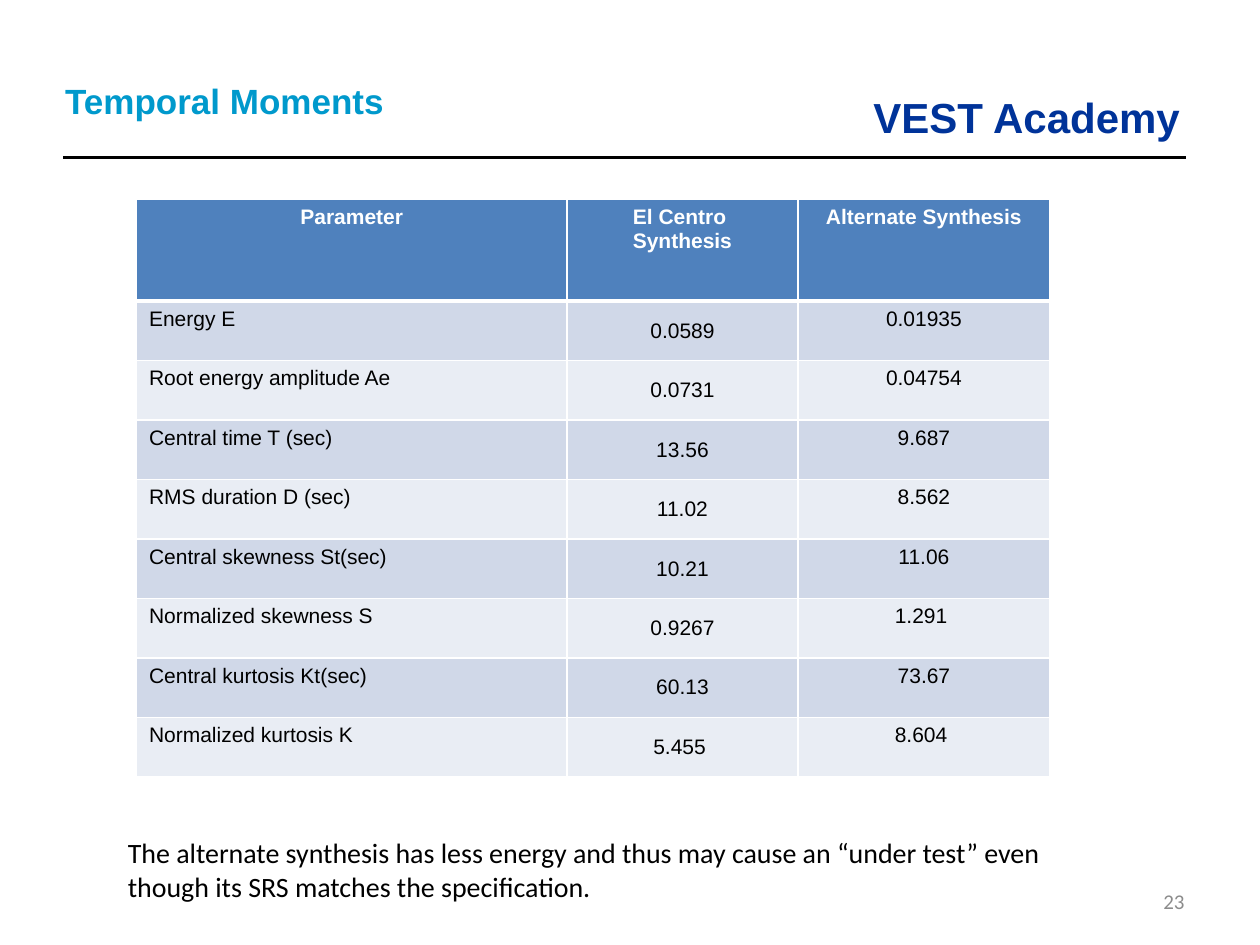
from pptx import Presentation
from pptx.dml.color import RGBColor
from pptx.enum.shapes import MSO_CONNECTOR
from pptx.enum.text import MSO_ANCHOR, MSO_AUTO_SIZE, PP_ALIGN
from pptx.oxml.ns import qn
from pptx.util import Pt
from lxml.etree import SubElement


def color(hex_string):
    return RGBColor.from_string(hex_string)


class SlideBuilder:
    heading_font = "Arial"
    body_font = "Calibri"
    black = "000000"
    white = "FFFFFF"
    header_fill = "4F81BD"
    band_fills = ("D0D8E8", "E9EDF4")

    def __init__(self, presentation):
        self.slide = presentation.slides.add_slide(presentation.slide_layouts[5])

    def add_runs(self, paragraph, text, size, font, hex_string, bold=False, align=PP_ALIGN.LEFT):
        paragraph.alignment = align
        for index, line in enumerate(text.split("\n")):
            if index:
                paragraph.add_line_break()
            run = paragraph.add_run()
            run.text = line
            run.font.size = Pt(size)
            run.font.name = font
            run.font.bold = bold
            run.font.color.rgb = color(hex_string)

    def frame(self, shape, wrap, anchor=MSO_ANCHOR.TOP):
        text_frame = shape.text_frame
        text_frame.word_wrap = wrap
        text_frame.auto_size = MSO_AUTO_SIZE.NONE
        text_frame.vertical_anchor = anchor
        return text_frame.paragraphs[0]

    def title(self, text, left, top, width, height):
        shape = self.slide.shapes.title
        shape.left, shape.top = Pt(left), Pt(top)
        shape.width, shape.height = Pt(width), Pt(height)
        self.add_runs(self.frame(shape, False), text, 20, self.heading_font, "0099CC", True)

    def text(self, text, left, top, width, height, size, font, hex_string,
             bold=False, align=PP_ALIGN.LEFT, wrap=True, anchor=MSO_ANCHOR.TOP):
        shape = self.slide.shapes.add_textbox(Pt(left), Pt(top), Pt(width), Pt(height))
        paragraph = self.frame(shape, wrap, anchor)
        self.add_runs(paragraph, text, size, font, hex_string, bold, align)

    def rule(self, left, right, top):
        line = self.slide.shapes.add_connector(
            MSO_CONNECTOR.STRAIGHT, Pt(left), Pt(top), Pt(right), Pt(top))
        line.line.color.rgb = color(self.black)
        line.line.width = Pt(2.25)
        SubElement(line._element.spPr, qn("a:effectLst"))

    def borders(self, cell, top, bottom):
        properties = cell._tc.get_or_add_tcPr()
        for side, width in (("L", 1), ("R", 1), ("T", top), ("B", bottom)):
            border = SubElement(properties, qn(f"a:ln{side}"), w=str(Pt(width)))
            fill = SubElement(border, qn("a:solidFill"))
            SubElement(fill, qn("a:srgbClr"), val=self.white)

    def table(self, rows, left, top, widths, header_height, row_height):
        heights = [header_height] + [row_height] * (len(rows) - 1)
        table = self.slide.shapes.add_table(
            len(rows), len(widths), Pt(left), Pt(top), Pt(sum(widths)), Pt(sum(heights))).table
        for column, width in zip(table.columns, widths):
            column.width = Pt(width)
        for row_index, values in enumerate(rows):
            table.rows[row_index].height = Pt(heights[row_index])
            header = row_index == 0
            for column_index, value in enumerate(values):
                cell = table.cell(row_index, column_index)
                self.borders(cell, 3 if row_index == 1 else 1, 3 if header else 1)
                cell.fill.solid()
                cell.fill.fore_color.rgb = color(
                    self.header_fill if header else self.band_fills[(row_index - 1) % 2])
                middle = column_index == 1 and not header
                cell.vertical_anchor = MSO_ANCHOR.MIDDLE if middle else MSO_ANCHOR.TOP
                align = PP_ALIGN.CENTER if header or column_index else PP_ALIGN.LEFT
                self.add_runs(cell.text_frame.paragraphs[0], value, 12, self.heading_font,
                              self.white if header else self.black, header, align)


def main():
    presentation = Presentation()
    presentation.slide_width, presentation.slide_height = Pt(720), Pt(540)
    builder = SlideBuilder(presentation)
    builder.text("VEST Academy", 492, 49, 196, 36, 24, builder.heading_font,
                 "003399", bold=True, wrap=False)
    builder.rule(36, 678, 90)
    builder.text("23", 516, 500.5, 168, 28.75, 12, builder.body_font, "8C8C8C",
                 align=PP_ALIGN.RIGHT, anchor=MSO_ANCHOR.MIDDLE)
    builder.title("Temporal Moments", 30, 42, 198, 31.5)
    builder.table([
        ("Parameter", "El Centro \nSynthesis", "Alternate Synthesis"),
        ("Energy E", "0.0589", "0.01935"),
        ("Root energy amplitude Ae", "0.0731", "0.04754"),
        ("Central time T (sec)", "13.56", "9.687"),
        ("RMS duration D (sec)", "11.02", "8.562"),
        ("Central skewness St(sec)", "10.21", "11.06"),
        ("Normalized skewness S", "0.9267", "1.291 "),
        ("Central kurtosis Kt(sec)", "60.13", "73.67"),
        ("Normalized kurtosis K", "5.455 ", "8.604 "),
    ], 78, 114, (246, 132, 144), 58, 34)
    builder.text("The alternate synthesis has less energy and thus may cause an “under test” "
                 "even though its SRS matches the specification.",
                 66, 474, 552, 46, 16, builder.body_font, builder.black)
    presentation.save("out.pptx")


if __name__ == "__main__":
    main()
